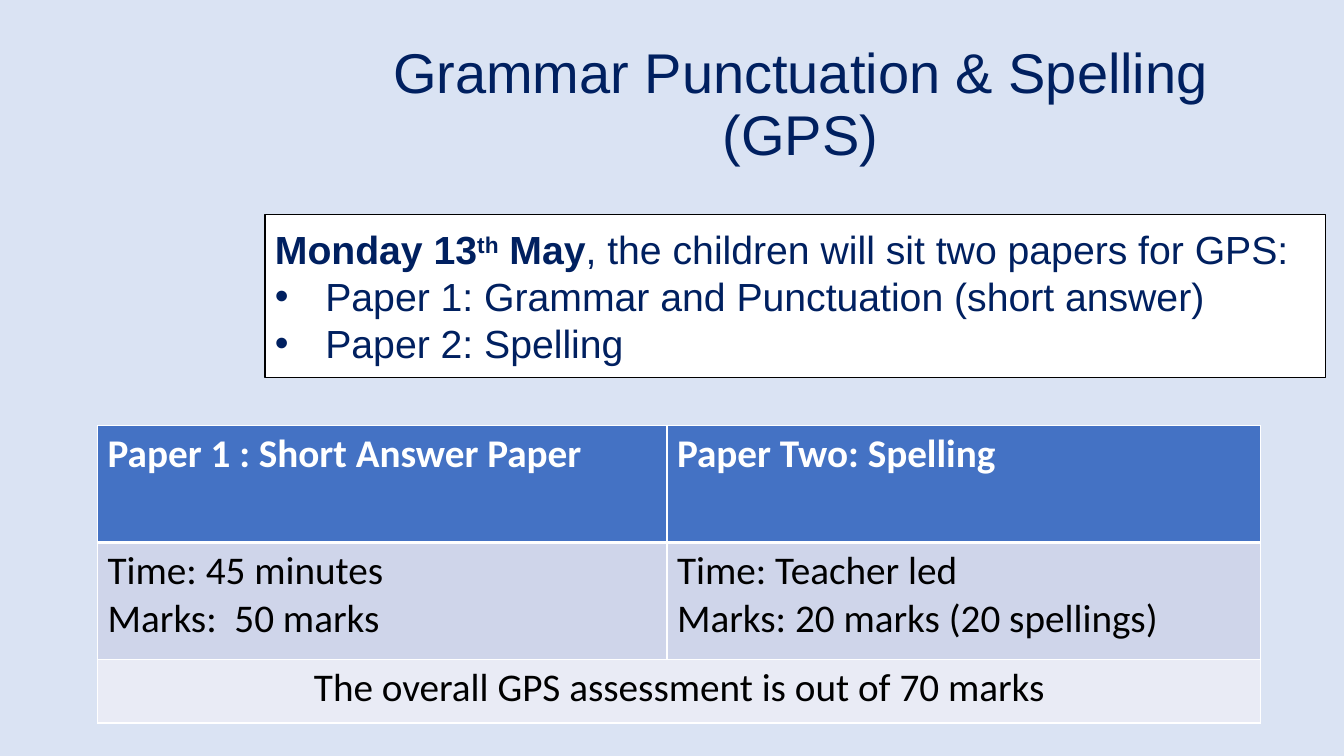
from lxml import etree
from pptx import Presentation
from pptx import util as u
from pptx.dml.color import RGBColor
from pptx.enum import shapes, text
from pptx.oxml import ns

NAVY, WHITE, BLACK, BLUE = "002060", "FFFFFF", "000000", "4472C4"
BODY_SIZE = 28


def rgb(value):
    return RGBColor.from_string(value)


def paint(fill, color):
    fill.solid()
    fill.fore_color.rgb = rgb(color)


def add_run(p, words, size, font, color, bold=False, baseline=0):
    r = p.add_run()
    r.text = words
    r.font.size = u.Pt(size)
    r.font.name = font
    r.font.bold = bold
    r.font.color.rgb = rgb(color)
    if baseline:
        r.font._element.set("baseline", str(baseline * 1000))


def add_bullet(p, indent):
    pPr = p._p.get_or_add_pPr()
    pPr.set("marL", str(indent))
    pPr.set("indent", str(-indent))
    etree.SubElement(pPr, ns.qn("a:buFont"), typeface="Arial")
    etree.SubElement(pPr, ns.qn("a:buChar"), char="•")


def set_border(cell, side, width, color=None):
    tcPr = cell._tc.get_or_add_tcPr()
    ln = etree.SubElement(tcPr, ns.qn(f"a:ln{side}"), w=str(u.Pt(width)))
    if color:
        solid = etree.SubElement(ln, ns.qn("a:solidFill"))
        etree.SubElement(solid, ns.qn("a:srgbClr"), val=color)
    else:
        etree.SubElement(ln, ns.qn("a:noFill"))


def add_table(s, left, top, widths, heights):
    frame = s.shapes.add_table(
        len(heights), len(widths), u.Cm(left), u.Cm(top),
        u.Cm(sum(widths)), u.Cm(sum(heights)))
    table = frame.table
    for column, width in zip(table.columns, widths):
        column.width = u.Cm(width)
    for row, height in zip(table.rows, heights):
        row.height = u.Cm(height)
    return table


def write_cell(cell, lines, size, font, color, bold=False, align=None):
    tf = cell.text_frame
    for i, line in enumerate(lines):
        p = tf.add_paragraph() if i else tf.paragraphs[0]
        p.alignment = align
        add_run(p, line, size, font, color, bold)


def add_title(s, words):
    cell = add_table(s, 9.02, 0.84, [22.3], [3.63]).cell(0, 0)
    for side in "LRTB":
        set_border(cell, side, 1)
    cell.fill.background()
    cell.vertical_anchor = text.MSO_ANCHOR.MIDDLE
    write_cell(cell, [words], 40, "Arial", NAVY, align=text.PP_ALIGN.CENTER)


def add_notice(s, opening, bullets):
    sp = s.shapes.add_shape(shapes.MSO_SHAPE.RECTANGLE, u.Cm(6.68),
                            u.Cm(5.41), u.Cm(26.72), u.Cm(4.11))
    sp.shadow.inherit = False
    paint(sp.fill, WHITE)
    sp.line.color.rgb = rgb(BLACK)
    sp.line.width = u.Pt(1)
    tf = sp.text_frame
    tf.word_wrap = True
    tf.vertical_anchor = text.MSO_ANCHOR.MIDDLE
    p = tf.paragraphs[0]
    p.alignment = text.PP_ALIGN.LEFT
    for words, bold, baseline in opening:
        add_run(p, words, BODY_SIZE, "Arial", NAVY, bold, baseline)
    for bullet in bullets:
        p = tf.add_paragraph()
        p.alignment = text.PP_ALIGN.LEFT
        add_bullet(p, u.Cm(1.27))
        add_run(p, bullet, BODY_SIZE, "Arial", NAVY)


def add_papers(s, rows):
    table = add_table(s, 2.46, 10.72, [14.35, 14.96], [2.95, 2.95, 1.6])
    fills = [BLUE, "CFD5EA", "E9EBF5"]
    for i, row in enumerate(rows):
        header = i == 0
        whole_row = len(row) == 1
        for j in range(2):
            cell = table.cell(i, j)
            widths = {"L": 1, "R": 1, "T": 3 if i == 1 else 1,
                      "B": 3 if header else 1}
            for side, width in widths.items():
                set_border(cell, side, width, WHITE)
            paint(cell.fill, fills[i])
        if whole_row:
            table.cell(i, 0).merge(table.cell(i, 1))
        for j, lines in enumerate(row):
            write_cell(table.cell(i, j), lines, BODY_SIZE, "Calibri",
                       WHITE if header else BLACK, header,
                       text.PP_ALIGN.CENTER if whole_row else None)


def main():
    prs = Presentation()
    prs.slide_width, prs.slide_height = u.Cm(33.87), u.Cm(19.05)
    s = prs.slides.add_slide(prs.slide_layouts[6])
    paint(s.background.fill, "DAE3F3")
    add_title(s, "Grammar Punctuation & Spelling (GPS)")
    add_notice(
        s,
        [("Monday 13", True, 0), ("th", True, 30), (" May", True, 0),
         (", the children will sit two papers for GPS:", False, 0)],
        ["Paper 1: Grammar and Punctuation (short answer)",
         "Paper 2: Spelling"])
    add_papers(s, [
        [["Paper 1 : Short Answer Paper"], ["Paper Two: Spelling"]],
        [["Time: 45 minutes", "Marks:  50 marks"],
         ["Time: Teacher led", "Marks: 20 marks (20 spellings)"]],
        [["The overall GPS assessment is out of 70 marks"]],
    ])
    prs.save("out.pptx")


if __name__ == "__main__":
    main()
